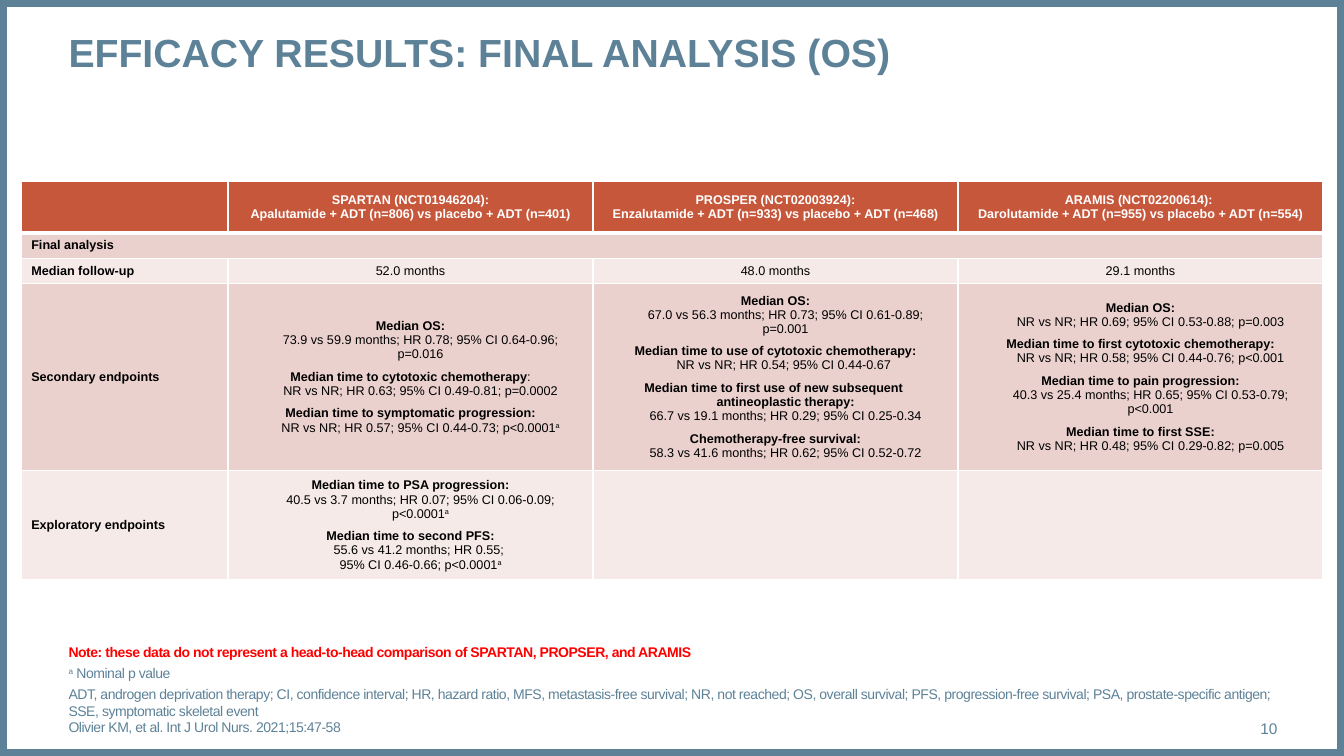
"""Build the slide on final overall survival results of three trials."""
import copy
import dataclasses
import typing

import lxml.etree
import pptx
import pptx.dml.color
import pptx.enum.shapes
import pptx.enum.text
import pptx.oxml.ns
import pptx.util

qn = pptx.oxml.ns.qn
ALIGN = pptx.enum.text.PP_ALIGN
ANCHOR = pptx.enum.text.MSO_ANCHOR


@dataclasses.dataclass(frozen=True)
class Theme:
    font: str = "Arial"
    slate: str = "5D8298"
    rust: str = "C6573B"
    rose: str = "EAD1CE"
    blush: str = "F5EAE8"
    white: str = "FFFFFF"
    black: str = "000000"
    red: str = "FF0000"
    title: int = 28
    page: int = 11
    note: int = 10
    cell: int = 9


class Box(typing.NamedTuple):
    """Hold a place in percent of the slide's width and height."""
    left: float
    top: float
    width: float
    height: float


class Span(typing.NamedTuple):
    text: str
    bold: bool = False
    sup: bool = False


class Para(typing.NamedTuple):
    spans: tuple[Span, ...]
    size: int
    color: str
    align: ALIGN = ALIGN.LEFT
    before: int = 0
    after: int = 0
    hang: float = 0
    track: int = 0


class Band(typing.NamedTuple):
    height: float
    fill: str
    color: str
    base: int
    cells: tuple[list[tuple[Span, ...]], ...]
    hang: float = 0


THEME = Theme()
WIDE, HIGH = pptx.util.Inches(13.33), pptx.util.Inches(7.5)
FIRST, REST = 15.38, 27.16
MARK = Span("a", sup=True)


def across(share: float) -> int:
    return round(WIDE * share / 100)


def down(share: float) -> int:
    return round(HIGH * share / 100)


def place(box: Box) -> tuple[int, int, int, int]:
    return across(box.left), down(box.top), across(box.width), down(box.height)


def tint(code: str) -> pptx.dml.color.RGBColor:
    return pptx.dml.color.RGBColor.from_string(code)


def bold(text: str) -> tuple[Span, ...]:
    return (Span(text, bold=True),)


def plain(text: str) -> tuple[Span, ...]:
    return (Span(text),)


def result(head: str, body: str, *marks: Span) -> tuple[Span, ...]:
    return (Span(head + "\n", bold=True), Span(body), *marks)


def append(par, text: str) -> None:
    for count, line in enumerate(text.split("\n")):
        if count:
            par.add_line_break()
        if line:
            par.add_run().text = line


def write(par, para: Para) -> None:
    par.alignment = para.align
    par.space_before = pptx.util.Pt(para.before)
    par.space_after = pptx.util.Pt(para.after)
    if para.hang:
        inset = pptx.util.Inches(para.hang)
        props = par._p.get_or_add_pPr()
        props.set("marL", str(inset))
        props.set("indent", str(-inset))
    par.text = para.spans[0].text
    start = 0
    for order, span in enumerate(para.spans):
        if order:
            append(par, span.text)
        for run in par.runs[start:]:
            font = run.font
            font.name, font.size, font.bold = THEME.font, pptx.util.Pt(para.size), span.bold
            font.color.rgb = tint(para.color)
            look = run._r.get_or_add_rPr()
            if span.sup:
                look.set("baseline", "30000")
            if para.track:
                look.set("spc", str(para.track))
        start = len(par.runs)
    for gap in par._p.findall(qn("a:br")):
        gap.insert(0, copy.deepcopy(par.runs[0]._r.rPr))


def fill_frame(frame, paras: list[Para]) -> None:
    for order, para in enumerate(paras):
        write(frame.add_paragraph() if order else frame.paragraphs[0], para)


def draw_text(slide, box: Box, paras: list[Para], anchor: ANCHOR = ANCHOR.TOP) -> None:
    frame = slide.shapes.add_textbox(*place(box)).text_frame
    frame.word_wrap = True
    frame.vertical_anchor = anchor
    frame.margin_left = frame.margin_right = frame.margin_top = frame.margin_bottom = 0
    fill_frame(frame, paras)


def edge(cell, base: int) -> None:
    props = cell._tc.get_or_add_tcPr()
    for order, (side, width) in enumerate(zip("LRTB", (1, 1, 1, base))):
        line = lxml.etree.Element(qn("a:ln" + side), w=str(pptx.util.Pt(width)))
        paint = lxml.etree.SubElement(line, qn("a:solidFill"))
        lxml.etree.SubElement(paint, qn("a:srgbClr"), val=THEME.white)
        props.insert(order, line)


def draw_table(slide, box: Box, bands: list[Band]) -> None:
    shape = slide.shapes.add_table(len(bands), 4, *place(box))
    table = shape.table
    table.horz_banding = False
    for order, width in enumerate((FIRST, REST, REST, REST)):
        table.columns[order].width = across(width)
    for row, band in enumerate(bands):
        table.rows[row].height = down(band.height)
        for col in range(4):
            cell = table.cell(row, col)
            cell.vertical_anchor = ANCHOR.MIDDLE
            cell.fill.solid()
            cell.fill.fore_color.rgb = tint(band.fill)
            edge(cell, band.base)
            items = band.cells[col] if col < len(band.cells) else []
            fill_frame(cell.text_frame, [
                Para(spans, THEME.cell, band.color, ALIGN.CENTER if col else ALIGN.LEFT,
                     after=6, hang=band.hang if col else 0) for spans in items])
        if len(band.cells) == 1:
            table.cell(row, 0).merge(table.cell(row, 3))
    shape.height = down(box.height)


BANDS = [
    Band(6.8, THEME.rust, THEME.white, 3, (
        [],
        [bold("SPARTAN (NCT01946204):\nApalutamide + ADT (n=806) vs placebo + ADT (n=401)")],
        [bold("PROSPER (NCT02003924):\nEnzalutamide + ADT (n=933) vs placebo + ADT (n=468)")],
        [bold("ARAMIS (NCT02200614): \nDarolutamide + ADT (n=955) vs placebo + ADT (n=554)")])),
    Band(3.2, THEME.rose, THEME.black, 1, ([bold("Final analysis")],)),
    Band(3.2, THEME.blush, THEME.black, 1, (
        [bold("Median follow-up")],
        *([plain(f"{months} months")] for months in ("52.0", "48.0", "29.1")))),
    Band(20, THEME.rose, THEME.black, 1, (
        [bold("Secondary endpoints")],
        [result("Median OS:", "73.9 vs 59.9 months; HR 0.78; 95% CI 0.64-0.96; p=0.016"),
         (Span("Median time to cytotoxic chemotherapy", bold=True),
          Span(":\nNR vs NR; HR 0.63; 95% CI 0.49-0.81; p=0.0002")),
         result("Median time to symptomatic progression:",
                "NR vs NR; HR 0.57; 95% CI 0.44-0.73; p<0.0001", MARK)],
        [result("Median OS:", "67.0 vs 56.3 months; HR 0.73; 95% CI 0.61-0.89; p=0.001"),
         result("Median time to use of cytotoxic chemotherapy:",
                "NR vs NR; HR 0.54; 95% CI 0.44-0.67 "),
         result("Median time to first use of new subsequent \nantineoplastic therapy:",
                "66.7 vs 19.1 months; HR 0.29; 95% CI 0.25-0.34"),
         result("Chemotherapy-free survival:", "58.3 vs 41.6 months; HR 0.62; 95% CI 0.52-0.72")],
        [result("Median OS:", "NR vs NR; HR 0.69; 95% CI 0.53-0.88; p=0.003"),
         result("Median time to first cytotoxic chemotherapy:",
                "NR vs NR; HR 0.58; 95% CI 0.44-0.76; p<0.001"),
         result("Median time to pain progression:",
                "40.3 vs 25.4 months; HR 0.65; 95% CI 0.53-0.79; p<0.001"),
         result("Median time to first SSE:", "NR vs NR; HR 0.48; 95% CI 0.29-0.82; p=0.005")]), 0.2),
    Band(10.13, THEME.blush, THEME.black, 1, (
        [bold("Exploratory endpoints")],
        [result("Median time to PSA progression:",
                "40.5 vs 3.7 months; HR 0.07; 95% CI 0.06-0.09; p<0.0001", MARK),
         result("Median time to second PFS:",
                "55.6 vs 41.2 months; HR 0.55; \n95% CI 0.46-0.66; p<0.0001", MARK)]), 0.2),
]
TERMS = ("ADT, androgen deprivation therapy; CI, confidence interval; HR, hazard ratio, "
         "MFS, metastasis-free survival; NR, not reached; OS, overall survival; "
         "PFS, progression-free survival; PSA, prostate-specific antigen; "
         "SSE, symptomatic skeletal event")
WARNING = "Note: these data do not represent a head-to-head comparison of SPARTAN, PROPSER, and ARAMIS"
NOTES = [
    Para(bold(WARNING), THEME.note, THEME.red, before=3, track=-30),
    Para((MARK, Span(" Nominal p value")), THEME.note, THEME.slate, before=3, track=-30),
    Para(plain(TERMS), THEME.note, THEME.slate, before=3, track=-30),
    Para(plain("Olivier KM, et al. Int J Urol Nurs. 2021;15:47-58"),
         THEME.note, THEME.slate, after=1, track=-30),
]


def main() -> None:
    deck = pptx.Presentation()
    deck.slide_width, deck.slide_height = WIDE, HIGH
    slide = deck.slides.add_slide(deck.slide_layouts[6])
    rim = slide.shapes.add_shape(pptx.enum.shapes.MSO_SHAPE.RECTANGLE, *place(Box(0, 0, 100, 100)))
    rim.shadow.inherit = False
    rim.fill.background()
    rim.line.color.rgb = tint(THEME.slate)
    rim.line.width = pptx.util.Pt(10)
    draw_text(slide, Box(5.1, 3.73, 89.95, 12.53),
              [Para(bold("EFFICACY RESULTS: FINAL ANALYSIS (OS)"), THEME.title, THEME.slate)])
    draw_text(slide, Box(88.6, 93.73, 6.45, 5.33),
              [Para(plain("10"), THEME.page, THEME.slate, ALIGN.RIGHT)], ANCHOR.MIDDLE)
    draw_text(slide, Box(5.1, 92, 90.4, 5.33), NOTES, ANCHOR.BOTTOM)
    draw_table(slide, Box(1.58, 24, 96.85, 50.67), BANDS)
    deck.save("out.pptx")


if __name__ == "__main__":
    main()
